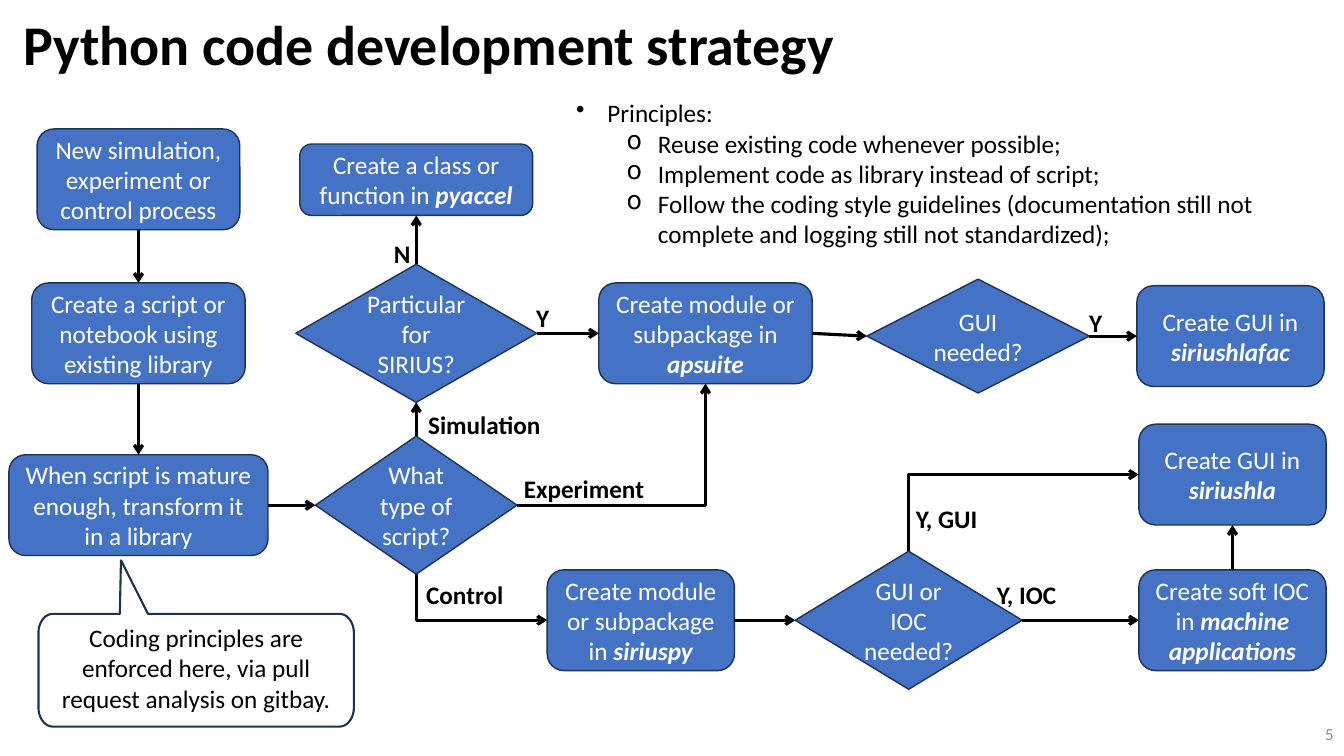
from math import cos, sin, radians
from pptx import Presentation
from pptx.dml.color import RGBColor
from pptx.enum.shapes import MSO_SHAPE, MSO_CONNECTOR
from pptx.enum.text import MSO_ANCHOR, PP_ALIGN
from pptx.oxml.ns import qn
from pptx.util import Cm, Pt
from lxml.etree import SubElement


def paint(color, hue):
    """Set a fill, line or font colour from a hex string."""
    color.rgb = RGBColor.from_string(hue)


def write(para, text, hue="000000", size=18, bold=None, italic=None):
    """Add one run to a paragraph."""
    run = para.add_run()
    run.text = text
    font = run.font
    font.name, font.size, font.bold, font.italic = "Calibri", Pt(size), bold, italic
    paint(font.color, hue)


deck = Presentation()
deck.slide_width, deck.slide_height = Cm(33.87), Cm(19.05)
slide = deck.slides.add_slide(deck.slide_layouts[5])
shapes = slide.shapes

# Title
title = shapes.title
title.left, title.top, title.width, title.height = Cm(0.33), Cm(0.25), Cm(29.46), Cm(1.9)
title.text_frame.vertical_anchor = MSO_ANCHOR.MIDDLE
para = title.text_frame.paragraphs[0]
para.alignment = PP_ALIGN.LEFT
para.line_spacing = 0.9
write(para, "Python code development strategy", size=40, bold=True)

# Slide number
number = shapes.add_textbox(Cm(26.24), Cm(17.98), Cm(7.62), Cm(1.02)).text_frame
number.vertical_anchor = MSO_ANCHOR.MIDDLE
para = number.paragraphs[0]
para.alignment = PP_ALIGN.RIGHT
write(para, "5", "8C8C8C", 12)

# Principles
rules = [
    (0, "Principles:"),
    (1, "Reuse existing code whenever possible;"),
    (1, "Implement code as library instead of script;"),
    (1, "Follow the coding style guidelines (documentation still not "
        "complete and logging still not standardized);"),
]
frame = shapes.add_textbox(Cm(14.27), Cm(2.34), Cm(18.31), Cm(4.24)).text_frame
frame.word_wrap = True
for i, (level, text) in enumerate(rules):
    para = frame.add_paragraph() if i else frame.paragraphs[0]
    para.level = level
    props = para._p.get_or_add_pPr()
    props.set("marL", str(Cm(0.79 + 1.27 * level)))
    props.set("indent", str(-Cm(0.79)))
    SubElement(props, qn("a:buChar")).set("char", "•o"[level])
    write(para, text)

# Steps and decisions: centre x, centre y, width, height, text, library
box, gate = MSO_SHAPE.ROUNDED_RECTANGLE, MSO_SHAPE.DIAMOND
steps = {
    "type": (gate, 10.49, 12.73, 5.08, 3.48, "What type of script?", ""),
    "new": (box, 3.49, 4.52, 5.11, 2.54, "New simulation, experiment or control process", ""),
    "script": (box, 3.49, 8.4, 5.38, 2.54, "Create a script or notebook using existing library", ""),
    "mature": (box, 3.49, 12.73, 6.53, 2.54,
               "When script is mature enough, transform it in a library", ""),
    "accel": (box, 10.49, 4.53, 5.87, 1.8, "Create a class or function in ", "pyaccel"),
    "suite": (box, 17.78, 8.4, 5.38, 2.54, "Create module or subpackage in ", "apsuite"),
    "ring": (gate, 10.49, 8.4, 6.07, 3.48, "Particular for SIRIUS?", ""),
    "choice": (gate, 22.9, 15.63, 5.72, 3.48, "GUI or IOC needed?", ""),
    "need": (gate, 24.65, 8.47, 5.61, 2.87, "GUI needed?", ""),
    "soft": (box, 31.06, 15.63, 4.72, 2.54, "Create soft IOC in ", "machine applications"),
    "hla": (box, 31.06, 11.96, 4.72, 2.54, "Create GUI in ", "siriushla"),
    "fac": (box, 31.01, 8.47, 4.72, 2.54, "Create GUI in ", "siriushlafac"),
    "py": (box, 16.15, 15.63, 4.72, 2.54, "Create module or subpackage in ", "siriuspy"),
}
nodes = {}
for name, (kind, x, y, w, h, text, lib) in steps.items():
    node = shapes.add_shape(kind, Cm(x - w / 2), Cm(y - h / 2), Cm(w), Cm(h))
    node.shadow.inherit = False
    node.fill.solid()
    paint(node.fill.fore_color, "4472C4")
    paint(node.line.color, "1E3256")
    node.line.width = Pt(1)
    frame = node.text_frame
    frame.word_wrap = True
    frame.vertical_anchor = MSO_ANCHOR.MIDDLE
    para = frame.paragraphs[0]
    para.alignment = PP_ALIGN.CENTER
    write(para, text, "FFFFFF")
    if lib:
        write(para, lib, "FFFFFF", bold=True, italic=True)
    nodes[name] = node

# Arrows between connection sites; an elbow leaves its first site sideways
top, left, bottom, right = range(4)
links = [
    ("new", bottom, "script", top, "tail"),
    ("script", bottom, "mature", top, "tail"),
    ("mature", right, "type", left, "tail"),
    ("type", top, "ring", bottom, "tail"),
    ("ring", top, "accel", bottom, "tail"),
    ("ring", right, "suite", left, "tail"),
    ("suite", right, "need", left, "tail"),
    ("need", right, "fac", left, "tail"),
    ("choice", right, "soft", left, "tail"),
    ("py", right, "choice", left, "tail"),
    ("soft", top, "hla", bottom, "tail"),
    ("type", right, "suite", bottom, "tail"),
    ("hla", left, "choice", top, "head"),
    ("py", left, "type", bottom, "head"),
]
for start, out, end, into, tip in links:
    bent = (out + into) % 2 == 1
    kind = MSO_CONNECTOR.ELBOW if bent else MSO_CONNECTOR.STRAIGHT
    link = shapes.add_connector(kind, 0, 0, 0, 0)
    link.begin_connect(nodes[start], out)
    link.end_connect(nodes[end], into)
    paint(link.line.color, "000000")
    link.line.width = Pt(2.25)
    SubElement(link.line._get_or_add_ln(), qn(f"a:{tip}End")).set("type", "arrow")
    props = link._element.spPr
    SubElement(props, qn("a:effectLst"))
    if bent:
        props.find(qn("a:prstGeom")).set("prst", "bentConnector2")

# Arrow labels
labels = [
    ("Y", 13.26, 7.49, 0.84), ("N", 9.68, 5.89, 0.94), ("Y", 27.2, 7.62, 0.84),
    ("Simulation", 10.54, 10.19, 3.38), ("Experiment", 12.95, 11.81, 3.56),
    ("Control", 10.49, 14.48, 2.46), ("Y, GUI", 22.83, 12.55, 2.08),
    ("Y, IOC", 24.87, 14.48, 2.03),
]
for text, x, y, w in labels:
    frame = shapes.add_textbox(Cm(x), Cm(y), Cm(w), Cm(1.02)).text_frame
    frame.word_wrap = False
    write(frame.paragraphs[0], text, bold=True)

# Callout: a narrow pointer, then rounded corners clockwise from the top right
x1, y1, x2, y2 = 0.97, 15.47, 8.92, 18.31
rx, ry = 0.36, 0.48
points = [(3.02, y1), (3.05, 14.12), (3.73, y1)]
corners = [(x2 - rx, y1 + ry), (x2 - rx, y2 - ry), (x1 + rx, y2 - ry), (x1 + rx, y1 + ry)]
for i, (cx, cy) in enumerate(corners):
    for turn in range(0, 91, 10):
        angle = radians(90 * i - 90 + turn)
        points.append((cx + rx * cos(angle), cy + ry * sin(angle)))
spots = [(Cm(x), Cm(y)) for x, y in points]
pen = shapes.build_freeform(*spots[0])
pen.add_line_segments(spots[1:], close=True)
note = pen.convert_to_shape()
note.shadow.inherit = False
note.fill.background()
paint(note.line.color, "1E3256")
note.line.width = Pt(1.5)
frame = note.text_frame
frame.word_wrap = True
frame.margin_top = Cm(1.35)
frame.vertical_anchor = MSO_ANCHOR.MIDDLE
para = frame.paragraphs[0]
para.alignment = PP_ALIGN.CENTER
write(para, "Coding principles are enforced here, via pull request analysis on gitbay.")

deck.save("out.pptx")
